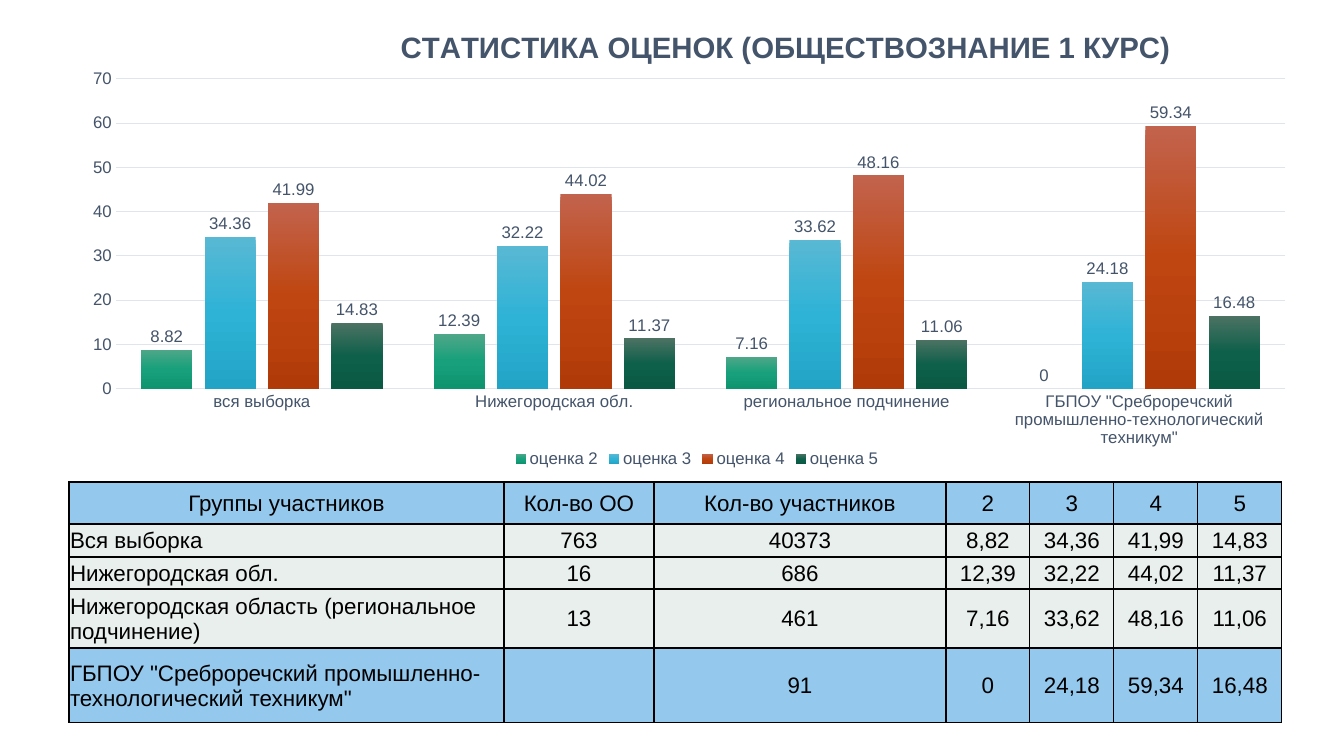
"""Build the slide with grade statistics: a column chart above a table."""
from copy import deepcopy

from lxml.etree import SubElement
from pptx import Presentation
from pptx.chart.data import CategoryChartData
from pptx.dml.color import RGBColor
from pptx.enum.chart import XL_CHART_TYPE, XL_LABEL_POSITION, XL_LEGEND_POSITION, XL_TICK_MARK
from pptx.enum.text import MSO_ANCHOR, PP_ALIGN
from pptx.oxml import parse_xml
from pptx.oxml.ns import nsdecls, qn
from pptx.util import Pt

hue = RGBColor.from_string
SLATE, GRID, BLACK = "44546A", "E0E5EB", "000000"
BLUE, PALE = "94C8ED", "E8EFEC"


def px(n):
    return round(n * 914400 / 100.8)


def place(part, index, **spots):
    for old in part.findall(qn("c:layout")):
        part.remove(old)
    layout = parse_xml(f"<c:layout {nsdecls('c')}><c:manualLayout/></c:layout>")
    for tag, val in spots.items():
        SubElement(layout[0], qn(f"c:{tag}")).set("val", str(val))
    part.insert(index, layout)


deck = Presentation()
deck.slide_width, deck.slide_height = px(1344), px(756)
slide = deck.slides.add_slide(deck.slide_layouts[6])

GROUPS = ["вся выборка", "Нижегородская обл.", "региональное подчинение",
          'ГБПОУ "Среброречский промышленно-технологический техникум"']
GRADES = [
    ("оценка 2", [8.82, 12.39, 7.16, 0], ["4EA788", "17A07B", "0F9470"]),
    ("оценка 3", [34.36, 32.22, 33.62, 24.18], ["59B8D4", "2EB3D6", "21A4C6"]),
    ("оценка 4", [41.99, 44.02, 48.16, 59.34], ["C2634D", "BF4611", "B13B08"]),
    ("оценка 5", [14.83, 11.37, 11.06, 16.48], ["4C7263", "0E604A", "095943"]),
]
data = CategoryChartData()
data.categories = GROUPS
for name, vals, tones in GRADES:
    data.add_series(name, vals)
chart = slide.shapes.add_chart(XL_CHART_TYPE.COLUMN_CLUSTERED, px(93), 0,
                               px(1207), px(472), data).chart
chart.font.name, chart.font.size = "Arial", Pt(12)

title = chart.chart_title
run = title.text_frame.paragraphs[0].add_run()
run.text = "СТАТИСТИКА ОЦЕНОК (ОБЩЕСТВОЗНАНИЕ 1 КУРС)"
run.font.name, run.font.size, run.font.bold = "Arial", Pt(21), True
run.font.color.rgb = hue(SLATE)
title.include_in_layout = False
place(title._element, 1, xMode="edge", yMode="edge", x=0.25, y=0.05)
place(chart._chartSpace.chart.plotArea, 0, layoutTarget="inner", xMode="edge",
      yMode="edge", x=0.018, y=0.167, w=0.97, h=0.657)

plot = chart.plots[0]
plot.gap_width, plot.overlap, plot.vary_by_categories = 100, -24, False
plot.has_data_labels = True
labels = plot.data_labels
labels.show_value, labels.position = True, XL_LABEL_POSITION.OUTSIDE_END
for bars, (name, vals, tones) in zip(plot.series, GRADES):
    fill = bars.format.fill
    fill.gradient()
    fill.gradient_angle = 270
    stops = bars._element.find(".//" + qn("a:gsLst"))
    stops.append(deepcopy(stops[-1]))
    for i, (stop, tone) in enumerate(zip(fill.gradient_stops, tones)):
        stop.color.rgb, stop.position = hue(tone), i / 2

cats, scale = chart.category_axis, chart.value_axis
scale.minimum_scale, scale.maximum_scale, scale.major_unit = 0, 70, 10
scale.has_major_gridlines = True
for axis in (cats, scale):
    axis.major_tick_mark = axis.minor_tick_mark = XL_TICK_MARK.NONE
for line in (cats.format.line, scale.major_gridlines.format.line):
    line.color.rgb, line.width = hue(GRID), Pt(0.75)
scale.format.line.fill.background()

chart.has_legend = True
legend = chart.legend
legend.position, legend.include_in_layout = XL_LEGEND_POSITION.BOTTOM, False
for font in (cats.tick_labels.font, scale.tick_labels.font, legend.font, labels.font):
    font.name, font.size = "Arial", Pt(12)
    font.color.rgb = hue(SLATE)

ROWS = [
    ["Группы участников", "Кол-во ОО", "Кол-во участников", "2", "3", "4", "5"],
    ["Вся выборка", "763", "40373", "8,82", "34,36", "41,99", "14,83"],
    ["Нижегородская обл.", "16", "686", "12,39", "32,22", "44,02", "11,37"],
    ["Нижегородская область (региональное подчинение)", "13", "461",
     "7,16", "33,62", "48,16", "11,06"],
    [GROUPS[-1], "", "91", "0", "24,18", "59,34", "16,48"],
]
WIDTHS = [435, 150, 292] + [84] * 4
HEIGHTS = [42, 33, 32, 59, 75]
table = slide.shapes.add_table(len(ROWS), len(WIDTHS), px(69), px(482),
                               px(sum(WIDTHS)), px(sum(HEIGHTS))).table
table.horz_banding = False
for col, width in zip(table.columns, WIDTHS):
    col.width = px(width)
for row, height in zip(table.rows, HEIGHTS):
    row.height = px(height)
for r, texts in enumerate(ROWS):
    for c, text in enumerate(texts):
        cell = table.cell(r, c)
        cell.margin_left = cell.margin_right = cell.margin_top = px(1)
        cell.margin_bottom = 0
        cell.vertical_anchor = MSO_ANCHOR.MIDDLE
        for side in "LRTB":
            cell._tc.get_or_add_tcPr().append(parse_xml(
                f'<a:ln{side} {nsdecls("a")} w="12700"><a:solidFill>'
                f'<a:srgbClr val="{BLACK}"/></a:solidFill></a:ln{side}>'))
        cell.fill.solid()
        cell.fill.fore_color.rgb = hue(BLUE if r in (0, len(ROWS) - 1) else PALE)
        if text:
            para = cell.text_frame.paragraphs[0]
            para.alignment = PP_ALIGN.CENTER if r == 0 or c else PP_ALIGN.LEFT
            run = para.add_run()
            run.text = text
            run.font.name, run.font.size, run.font.bold = "Arial", Pt(16), False
            run.font.color.rgb = hue(BLACK)

deck.save("out.pptx")
